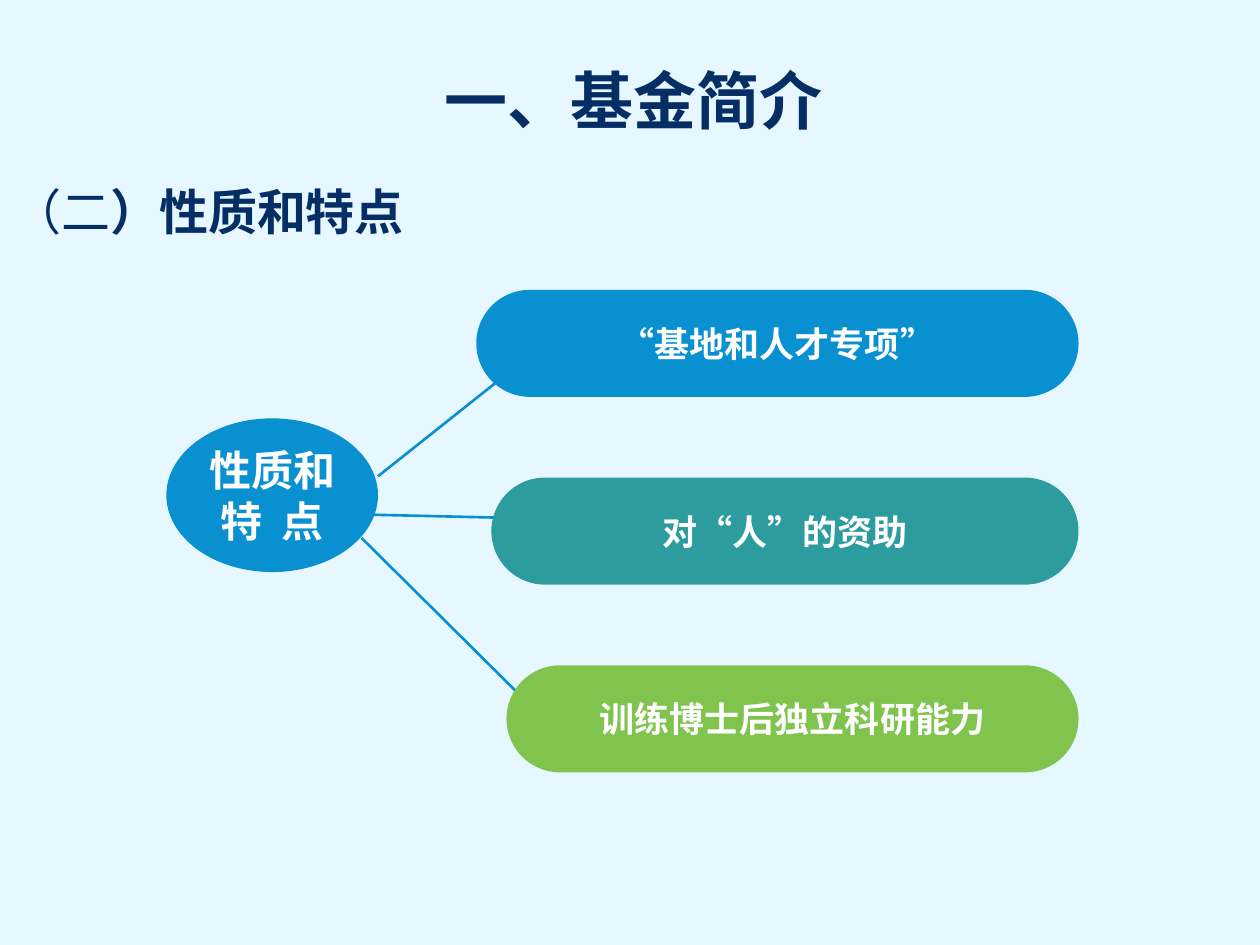
"""Build the slide on the nature and features of the fund."""
from lxml.etree import SubElement
from pptx import Presentation
from pptx.dml.color import RGBColor
from pptx.enum.lang import MSO_LANGUAGE_ID as Language
from pptx.enum.shapes import MSO_CONNECTOR as Connector, MSO_SHAPE as Shape
from pptx.enum.text import MSO_ANCHOR as Anchor, PP_ALIGN as Align
from pptx.oxml.ns import qn
from pptx.util import Inches, Pt

WIDTH, HEIGHT = Inches(10), Inches(7.5)
FONT = "Noto Sans CJK SC"
BACKGROUND = RGBColor(0xE6, 0xF7, 0xFF)
NAVY = RGBColor(0x05, 0x2E, 0x65)
BLUE = RGBColor(0x08, 0x90, 0xD0)
TEAL = RGBColor(0x2D, 0x9C, 0x9F)
GREEN = RGBColor(0x80, 0xC3, 0x4D)
WHITE = RGBColor(0xFF, 0xFF, 0xFF)

PILLS = [("“基地和人才专项”", BLUE), ("对“人”的资助", TEAL), ("训练博士后独立科研能力", GREEN)]
PILL_LEFT, PILL_INDENT, PILL_RIGHT = 37.8, 1.2, 85.6
PILL_TOP, PILL_STEP, PILL_HEIGHT = 30.67, 19.87, 11.33
ARROWS = [(30, 50.4, 40.2, 39.6), (23, 54.27, 40.2, 54.8), (28.7, 56.93, 41.7, 74.13)]


def scale(x, y, *more):
    """Turn alternating percentages of slide width and height into lengths."""
    sides = (WIDTH, HEIGHT)
    return [int(sides[i % 2] * value / 100) for i, value in enumerate((x, y, *more))]


def add_run(paragraph, text, size, color, bold=True):
    """Add one run in the slide's font, for Latin and East Asian script."""
    run = paragraph.add_run()
    run.text = text
    font = run.font
    font.size, font.bold, font.name = Pt(size), bold, FONT
    font.color.rgb = color
    font.language_id = Language.SIMPLIFIED_CHINESE
    SubElement(run._r.get_or_add_rPr(), qn("a:ea"), typeface=FONT)


def set_frame(shape, align, anchor, margin=None):
    """Prepare the text frame of a shape and return its first paragraph."""
    frame = shape.text_frame
    frame.word_wrap, frame.vertical_anchor = True, anchor
    if margin is not None:
        frame.margin_left = frame.margin_right = Inches(margin)
        frame.margin_top = frame.margin_bottom = Inches(margin)
    paragraph = frame.paragraphs[0]
    paragraph.alignment = align
    return paragraph


def add_heading(slide, place, runs, size, align, anchor):
    """Add a text box whose runs are pairs of text and boldness."""
    box = slide.shapes.add_textbox(*scale(*place))
    paragraph = set_frame(box, align, anchor)
    for text, bold in runs:
        add_run(paragraph, text, size, NAVY, bold)


def add_arrow(slide, ends):
    """Add a blue arrow between two points."""
    arrow = slide.shapes.add_connector(Connector.STRAIGHT, *scale(*ends))
    arrow.line.color.rgb = BLUE
    arrow.line.width = Pt(1.5)
    SubElement(arrow.line._get_or_add_ln(), qn("a:tailEnd"), type="triangle")
    SubElement(arrow._element.spPr, qn("a:effectLst"))


def add_node(slide, kind, place, text, fill, size, margin):
    """Add a filled shape with centred white text."""
    shape = slide.shapes.add_shape(kind, *scale(*place))
    shape.shadow.inherit = False
    shape.fill.solid()
    shape.fill.fore_color.rgb = fill
    shape.line.fill.background()
    paragraph = set_frame(shape, Align.CENTER, Anchor.MIDDLE, margin)
    add_run(paragraph, text, size, WHITE)
    return shape


def add_pill(slide, index, text, fill):
    """Add one rounded bar, indented further than the one above."""
    left = PILL_LEFT + index * PILL_INDENT
    place = (left, PILL_TOP + index * PILL_STEP, PILL_RIGHT - left, PILL_HEIGHT)
    pill = add_node(slide, Shape.ROUNDED_RECTANGLE, place, text, fill, 20, 0.05)
    pill.adjustments[0] = 0.5


def main():
    """Create the presentation and save it."""
    presentation = Presentation()
    presentation.slide_width, presentation.slide_height = WIDTH, HEIGHT
    slide = presentation.slides.add_slide(presentation.slide_layouts[6])
    slide.background.fill.solid()
    slide.background.fill.fore_color.rgb = BACKGROUND

    add_heading(slide, (2.4, 5.87, 95.7, 9.33), [("一、基金简介", True)],
                36, Align.CENTER, Anchor.MIDDLE)
    for ends in ARROWS:
        add_arrow(slide, ends)
    for index, (text, fill) in enumerate(PILLS):
        add_pill(slide, index, text, fill)
    add_node(slide, Shape.OVAL, (13.2, 44.27, 16.8, 16.27), "性质和特  点", BLUE, 24, 0)
    add_heading(slide, (0, 18.53, 78.8, 8.4), [("（二", False), ("）性质和特点", True)],
                28, Align.LEFT, Anchor.TOP)
    presentation.save("out.pptx")


if __name__ == "__main__":
    main()
